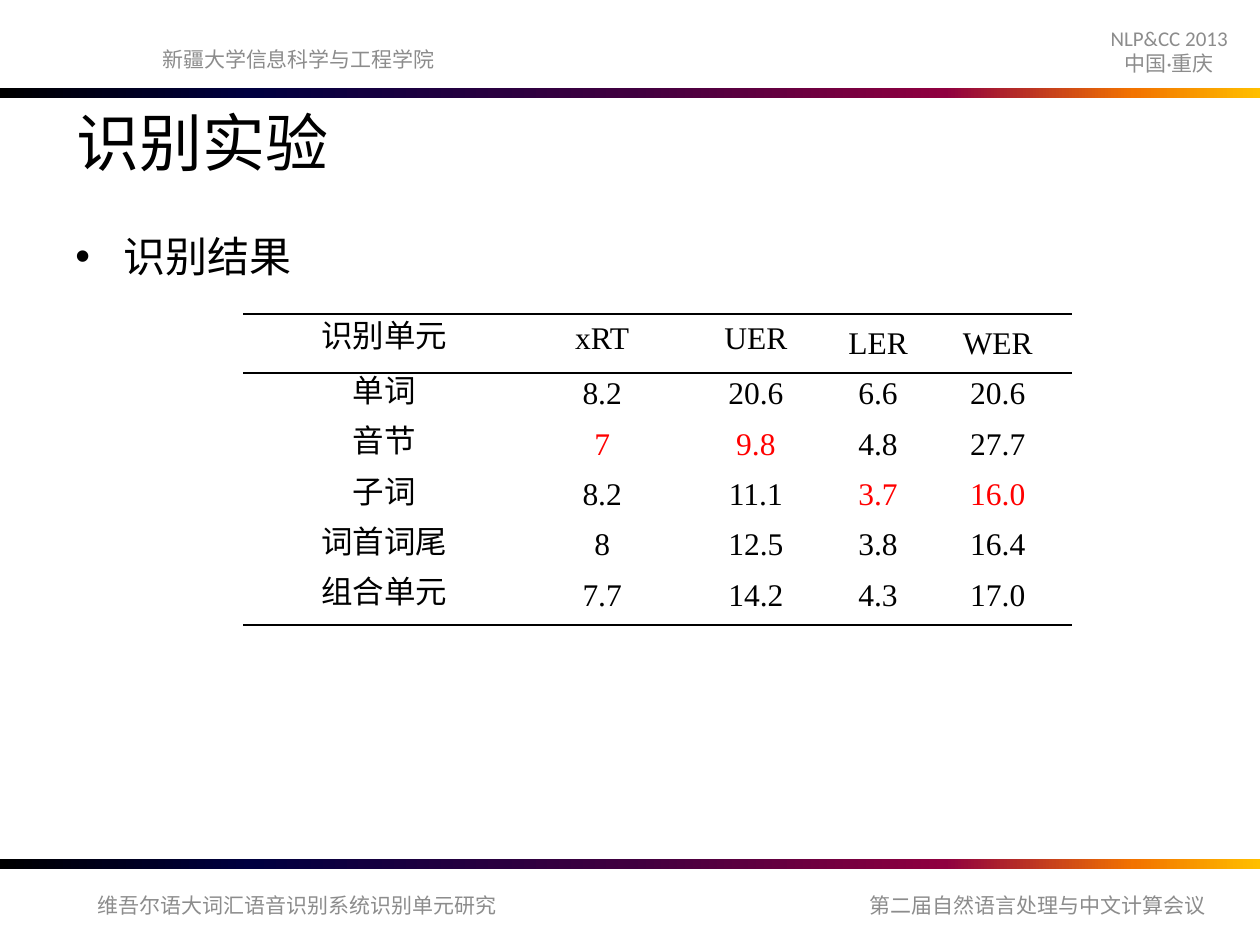
import pptx
import pptx.util
import pptx.dml.color
import pptx.enum.shapes
import pptx.enum.text
import pptx.oxml
import pptx.oxml.ns

Inches = pptx.util.Inches
Pt = pptx.util.Pt
RGBColor = pptx.dml.color.RGBColor
ALIGN = pptx.enum.text.PP_ALIGN
ANCHOR = pptx.enum.text.MSO_ANCHOR

BLACK = RGBColor(0x00, 0x00, 0x00)
GRAY = RGBColor(0x8C, 0x8C, 0x8C)
RED = RGBColor(0xFF, 0x00, 0x00)
STOPS = [
    (0, BLACK),
    (20, RGBColor(0x00, 0x00, 0x40)),
    (50, RGBColor(0x40, 0x00, 0x40)),
    (75, RGBColor(0x8F, 0x00, 0x40)),
    (90, RGBColor(0xF2, 0x73, 0x00)),
    (100, RGBColor(0xFF, 0xBF, 0x00)),
]
NS = pptx.oxml.ns.nsdecls("a")

deck = pptx.Presentation()
deck.slide_width = Inches(10)
deck.slide_height = Inches(7.5)
slide = deck.slides.add_slide(deck.slide_layouts[6])


def add_run(para, text, size, color, face="Calibri"):
    run = para.add_run()
    run.text = text
    run.font.size = Pt(size)
    run.font.name = face
    run.font.color.rgb = color


def add_box(left, top, width, height, anchor):
    box = slide.shapes.add_textbox(
        Inches(left), Inches(top), Inches(width), Inches(height))
    box.text_frame.word_wrap = True
    box.text_frame.vertical_anchor = anchor
    return box.text_frame.paragraphs[0]


# Gradient bars under the header and above the footer
for top in (6.82, 0.7):
    bar = slide.shapes.add_shape(
        pptx.enum.shapes.MSO_SHAPE.FLOWCHART_PROCESS,
        Inches(0), Inches(top), Inches(10), Inches(0.08))
    bar.shadow.inherit = False
    bar.line.fill.background()
    bar.fill.gradient()
    bar.fill.gradient_angle = 0
    stops = bar._element.spPr.find(".//" + pptx.oxml.ns.qn("a:gsLst"))
    for old in list(stops):
        stops.remove(old)
    for pos, color in STOPS:
        stops.append(pptx.oxml.parse_xml(
            f'<a:gs {NS} pos="{pos * 1000}"><a:srgbClr val="{color}"/></a:gs>'))

# Header and footer notes
for text, left, top, width in [
    ("第二届自然语言处理与中文计算会议", 6.65, 6.98, 3.17),
    ("新疆大学信息科学与工程学院", 1.15, 0.27, 2.44),
    ("维吾尔语大词汇语音识别系统识别单元研究", 0.53, 6.98, 3.66),
    ("NLP&CC 2013中国·重庆", 8.68, 0.2, 1.2),
]:
    para = add_box(left, top, width, 0.4, ANCHOR.MIDDLE)
    para.alignment = ALIGN.CENTER
    add_run(para, text, 12, GRAY)

# Title
add_run(add_box(0.51, 0.77, 8.98, 0.86, ANCHOR.TOP), "识别实验", 36, BLACK)

# Bullet line
para = add_box(0.5, 1.78, 9, 0.71, ANCHOR.TOP)
props = para._p.get_or_add_pPr()
props.set("marL", str(Inches(0.38)))
props.set("indent", str(-Inches(0.38)))
props.append(pptx.oxml.parse_xml(f'<a:buFont {NS} typeface="Arial"/>'))
props.append(pptx.oxml.parse_xml(f'<a:buChar {NS} char="•"/>'))
add_run(para, "识别结果", 24, BLACK)

# Result table
ROWS = [
    ["识别单元", "xRT", "UER", "LER", "WER"],
    ["单词", "8.2", "20.6", "6.6", "20.6"],
    ["音节", "7", "9.8", "4.8", "27.7"],
    ["子词", "8.2", "11.1", "3.7", "16.0"],
    ["词首词尾", "8", "12.5", "3.8", "16.4"],
    ["组合单元", "7.7", "14.2", "4.3", "17.0"],
]
BEST = {(2, 1), (2, 2), (3, 3), (3, 4)}
last = len(ROWS) - 1
table = slide.shapes.add_table(
    len(ROWS), len(ROWS[0]),
    Inches(1.93), Inches(2.49), Inches(6.57), Inches(2.5)).table
table.first_row = False
table.horz_banding = False
for col, width in zip(table.columns, (2.24, 1.22, 1.22, 0.72, 1.18)):
    col.width = Inches(width)
for r, texts in enumerate(ROWS):
    table.rows[r].height = Inches(0.47 if r == 0 else 0.4)
    # Rules above and below the head row, and below the last row
    ruled = {"T": r <= 1, "B": r in (0, last)}
    for c, text in enumerate(texts):
        cell = table.cell(r, c)
        cell.vertical_anchor = ANCHOR.MIDDLE
        cell.margin_left = cell.margin_right = Inches(0.01)
        cell.margin_top = cell.margin_bottom = Inches(0)
        para = cell.text_frame.paragraphs[0]
        para.alignment = ALIGN.CENTER
        if r > 0 or c < 3:
            para.line_spacing = Pt(15.1)
            para.space_after = Pt(1)
        add_run(para, text, 18, RED if (r, c) in BEST else BLACK,
                "Times New Roman")
        for side in "LRTB":
            paint = "<a:noFill/>"
            if ruled.get(side):
                paint = f'<a:solidFill><a:srgbClr val="{BLACK}"/></a:solidFill>'
            cell._tc.get_or_add_tcPr().append(pptx.oxml.parse_xml(
                f'<a:ln{side} {NS} w="{Pt(1)}">{paint}</a:ln{side}>'))
        cell.fill.background()

deck.save("out.pptx")
